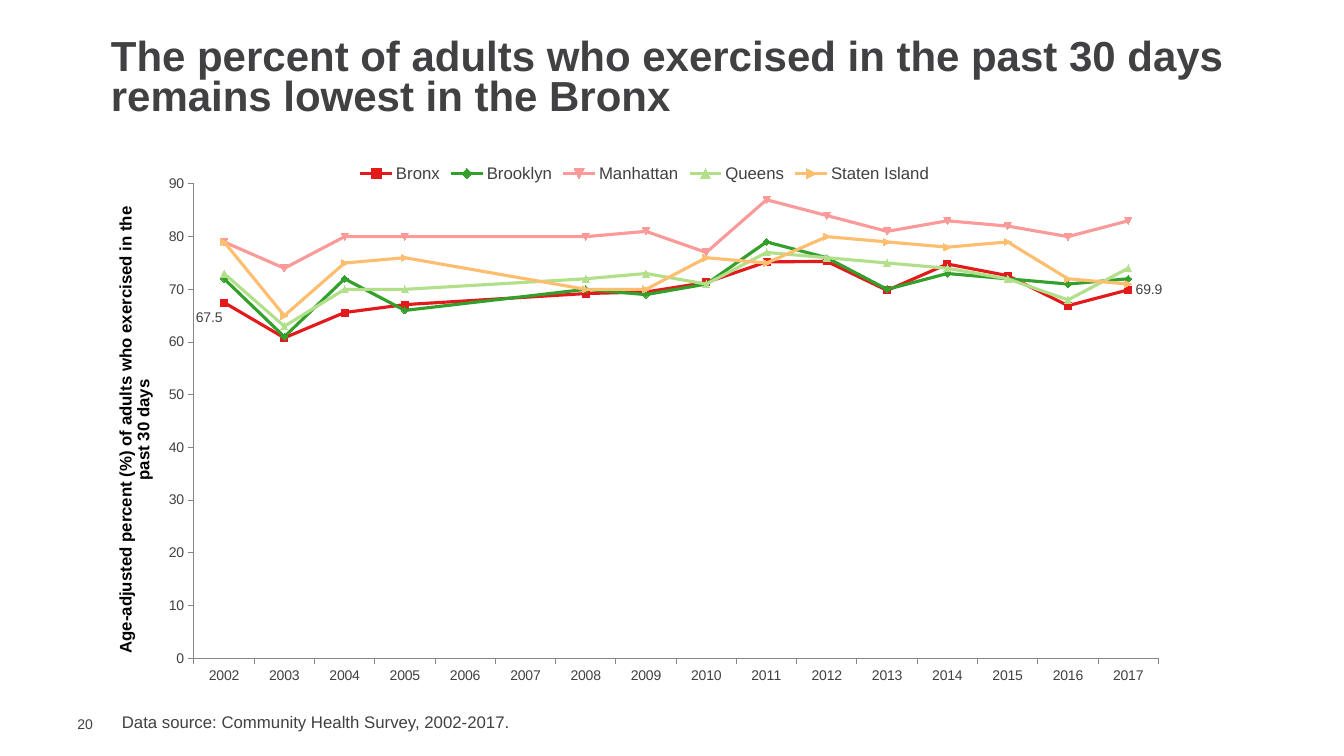
from lxml import etree
from pptx import Presentation
from pptx import util as u
from pptx.chart.data import CategoryChartData
from pptx.dml.color import RGBColor
from pptx.enum import chart as ch
from pptx.enum import text
from pptx.oxml.ns import qn

INK = "414042"
AXIS = "868686"
YEARS = [str(year) for year in range(2002, 2018)]
BOROUGHS = {
    "Bronx": ("E31A1C", [67.5, 60.8, 65.6, 67.1, None, None, 69.2, 69.5,
                         71.3, 75.2, 75.3, 69.8, 74.8, 72.6, 66.9, 69.9]),
    "Brooklyn": ("33A02C", [72, 61, 72, 66, None, None, 70, 69,
                            71, 79, 76, 70, 73, 72, 71, 72]),
    "Manhattan": ("FB9A99", [79, 74, 80, 80, None, None, 80, 81,
                             77, 87, 84, 81, 83, 82, 80, 83]),
    "Queens": ("B2DF8A", [73, 63, 70, 70, None, None, 72, 73,
                          71, 77, 76, 75, 74, 72, 68, 74]),
    "Staten Island": ("FDBF6F", [79, 65, 75, 76, None, None, 70, 70,
                                 76, 75, 80, 79, 78, 79, 72, 71]),
}


def rgb(value):
    return RGBColor.from_string(value)


def style(font, size, color=INK, bold=False):
    font.name = "Arial"
    font.size = u.Pt(size)
    font.bold = bold
    font.color.rgb = rgb(color)


def inches(box):
    return [u.Inches(length) for length in box]


def manual_layout(parent, index, **settings):
    for old in parent.findall(qn("c:layout")):
        parent.remove(old)
    layout = etree.Element(qn("c:layout"))
    manual = etree.SubElement(layout, qn("c:manualLayout"))
    for tag, value in settings.items():
        etree.SubElement(manual, qn(f"c:{tag}")).set("val", str(value))
    parent.insert(index, layout)


def add_headline(slide, box, wording):
    headline = slide.shapes.title
    headline.left, headline.top, headline.width, headline.height = inches(box)
    frame = headline.text_frame
    frame.text = wording
    frame.word_wrap = True
    frame.auto_size = text.MSO_AUTO_SIZE.NONE
    frame.vertical_anchor = text.MSO_ANCHOR.MIDDLE
    line = frame.paragraphs[0]
    line.alignment = text.PP_ALIGN.LEFT
    line.line_spacing = 0.8
    style(line.runs[0].font, 30, bold=True)


def add_note(slide, box, wording, size, padding=0.05):
    frame = slide.shapes.add_textbox(*inches(box)).text_frame
    frame.word_wrap = True
    frame.margin_top = frame.margin_bottom = u.Inches(padding)
    frame.margin_right = u.Inches(padding)
    frame.vertical_anchor = text.MSO_ANCHOR.MIDDLE
    frame.text = wording
    style(frame.paragraphs[0].runs[0].font, size)


def style_axis(axis):
    axis.has_major_gridlines = False
    axis.major_tick_mark = ch.XL_TICK_MARK.OUTSIDE
    axis.minor_tick_mark = ch.XL_TICK_MARK.NONE
    axis.format.line.color.rgb = rgb(AXIS)
    axis.format.line.width = u.Pt(0.75)
    style(axis.tick_labels.font, 10)


def style_borough(borough, color):
    borough.smooth = False
    borough.format.line.color.rgb = rgb(color)
    borough.format.line.width = u.Pt(2.25)
    marker = borough.marker
    marker.style = ch.XL_MARKER_STYLE.AUTOMATIC
    marker.size = 5
    marker.format.fill.solid()
    marker.format.fill.fore_color.rgb = rgb(color)
    marker.format.line.color.rgb = rgb(color)


def label_ends(borough):
    borough.data_labels.show_value = False
    places = {0: ch.XL_LABEL_POSITION.BELOW,
              len(YEARS) - 1: ch.XL_LABEL_POSITION.RIGHT}
    for index, place in places.items():
        label = borough.points[index].data_label
        style(label.font, 10)
        label.position = place
    first = borough.data_labels._element.find(qn("c:dLbl"))
    manual_layout(first, 1, x=-0.014, y=0)


def add_trend(slide, box):
    data = CategoryChartData()
    data.categories = YEARS
    for name, (_, percents) in BOROUGHS.items():
        data.add_series(name, percents)
    trend = slide.shapes.add_chart(
        ch.XL_CHART_TYPE.LINE_MARKERS, *inches(box), data).chart
    style(trend.font, 18)
    trend.has_title = False
    trend.has_legend = True
    trend.legend.position = ch.XL_LEGEND_POSITION.TOP
    trend.legend.include_in_layout = False
    style(trend.legend.font, 12)

    style_axis(trend.category_axis)
    percent_axis = trend.value_axis
    style_axis(percent_axis)
    percent_axis.minimum_scale = 0
    percent_axis.maximum_scale = 90
    percent_axis.major_unit = 10
    caption = percent_axis.axis_title.text_frame
    caption.text = ("Age-adjusted percent (%) of adults who exercised "
                    "in the past 30 days")
    style(caption.paragraphs[0].runs[0].font, 12, "000000", True)

    plot = trend.plots[0]
    plot.vary_by_categories = False
    for borough in plot.series:
        style_borough(borough, BOROUGHS[borough.name][0])
    label_ends(plot.series[0])

    chart_xml = trend._chartSpace.find(qn("c:chart"))
    chart_xml.find(qn("c:dispBlanksAs")).set("val", "span")
    manual_layout(chart_xml.find(qn("c:plotArea")), 0, layoutTarget="inner",
                  xMode="edge", yMode="edge", x=0.077, y=0.054,
                  w=0.905, h=0.833)


def main():
    deck = Presentation()
    deck.slide_width = u.Inches(13.33)
    deck.slide_height = u.Inches(7.5)
    slide = deck.slides.add_slide(deck.slide_layouts[5])
    add_headline(slide, (1, 0.33, 11.33, 0.91),
                 "The percent of adults who exercised in the past 30 days "
                 "remains lowest in the Bronx")
    add_trend(slide, (1.11, 1.52, 10.57, 5.65))
    add_note(slide, (1.11, 7.01, 9.71, 0.3),
             "Data source: Community Health Survey, 2002-2017.", 12)
    add_note(slide, (0.67, 7.1, 0.43, 0.17), "20", 10, padding=0)
    deck.save("out.pptx")


if __name__ == "__main__":
    main()
